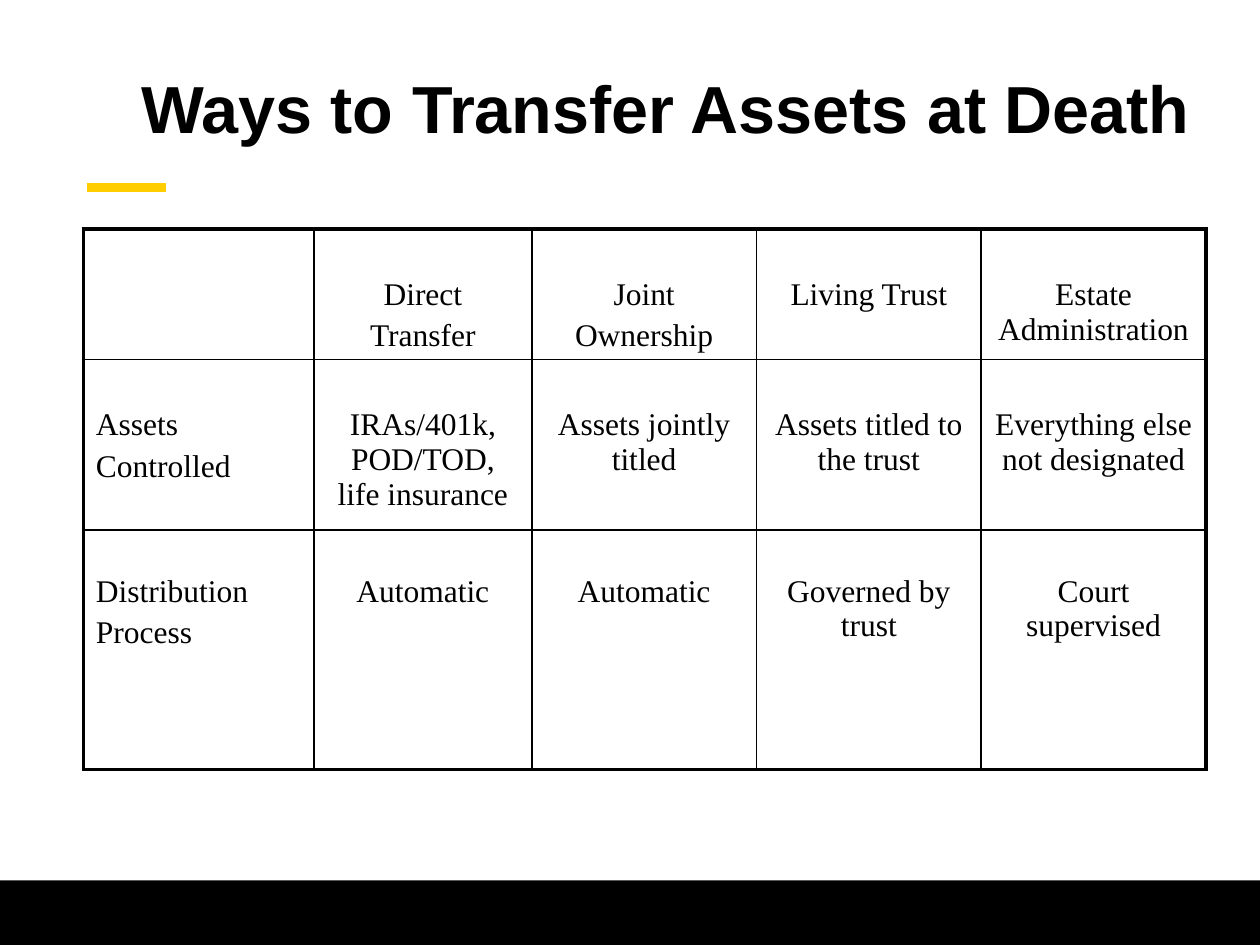
from dataclasses import dataclass

from lxml.etree import SubElement
from pptx import Presentation
from pptx.dml.color import RGBColor
from pptx.enum.shapes import MSO_CONNECTOR, MSO_SHAPE
from pptx.enum.text import MSO_ANCHOR, PP_ALIGN
from pptx.oxml.ns import qn
from pptx.util import Cm, Pt

BLACK = RGBColor(0x00, 0x00, 0x00)
GOLD = RGBColor(0xFF, 0xCD, 0x00)
THIN, THICK = 1, 2.25
PAD, DROP = 0.13, 0.97  # top cell margins in cm: plain, and one line lower


@dataclass
class Rule:
    left: float
    right: float
    top: float
    color: RGBColor
    width: float


@dataclass
class Row:
    high: float
    texts: tuple[str, ...]
    pad: float = PAD
    above: float = 0
    below: float = 0


RULES = [
    Rule(1.75, 3.35, 3.78, GOLD, 5),
    Rule(1.68, 24.31, 10.69, BLACK, THIN),
]
COLS = [4.65, 4.39, 4.53, 4.53, 4.53]
BLANK = ("",) * len(COLS)
ROWS = [
    Row(2.62, ("", "Direct\nTransfer", "Joint\nOwnership", "Living Trust",
               "Estate Administration"), DROP, THICK, THIN),
    Row(4.19, ("Assets\nControlled", "IRAs/401k, POD/TOD, life insurance",
               "Assets jointly titled", "Assets titled to the trust",
               "Everything else not designated"), DROP, THIN),
    Row(1.73, ("Distribution\nProcess", "Automatic", "Automatic",
               "Governed by trust", "Court supervised")),
    Row(1.14, BLANK),
    Row(1.14, BLANK, below=THICK),
]


def draw_rule(slide, rule: Rule) -> None:
    line = slide.shapes.add_connector(
        MSO_CONNECTOR.STRAIGHT, Cm(rule.left), Cm(rule.top),
        Cm(rule.right), Cm(rule.top))
    line.line.color.rgb = rule.color
    line.line.width = Pt(rule.width)
    SubElement(line._element.spPr, qn("a:effectLst"))


def draw_edge(cell, side: str, width: float) -> None:
    edge = SubElement(cell._tc.get_or_add_tcPr(), qn(f"a:ln{side}"),
                      w=str(Pt(width)))
    if width:
        fill = SubElement(edge, qn("a:solidFill"))
        SubElement(fill, qn("a:srgbClr"), val=str(BLACK))
    else:
        SubElement(edge, qn("a:noFill"))


def fill_cell(cell, row: Row, col: int) -> None:
    last = len(COLS) - 1
    draw_edge(cell, "L", THICK if col == 0 else THIN)
    draw_edge(cell, "R", THICK if col == last else THIN)
    draw_edge(cell, "T", row.above)
    draw_edge(cell, "B", row.below)
    cell.fill.background()
    cell.margin_top = Cm(row.pad)
    cell.vertical_anchor = MSO_ANCHOR.TOP
    frame = cell.text_frame
    for i, text in enumerate(row.texts[col].split("\n")):
        para = frame.add_paragraph() if i else frame.paragraphs[0]
        para.alignment = PP_ALIGN.CENTER if col else PP_ALIGN.LEFT
        para.font.size = Pt(18)
        if i:
            para.space_before = Pt(3.6)
        if text:
            run = para.add_run()
            run.text = text
            run.font.size = Pt(18)
            run.font.name = "Times New Roman"
            run.font.color.rgb = BLACK


def draw_table(slide) -> None:
    table = slide.shapes.add_table(
        len(ROWS), len(COLS), Cm(1.68), Cm(4.62),
        Cm(sum(COLS)), Cm(sum(row.high for row in ROWS))).table
    table.first_row = table.horz_banding = False
    for col, width in enumerate(COLS):
        table.columns[col].width = Cm(width)
    for i, row in enumerate(ROWS):
        table.rows[i].height = Cm(row.high)
        for col in range(len(COLS)):
            fill_cell(table.cell(i, col), row, col)


def draw_title(slide, text: str) -> None:
    title = slide.shapes.title
    title.left, title.top = Cm(2.59), Cm(0.28)
    title.width, title.height = Cm(21.97), Cm(3.94)
    frame = title.text_frame
    frame.word_wrap = True
    frame.vertical_anchor = MSO_ANCHOR.MIDDLE
    para = frame.paragraphs[0]
    para.alignment = PP_ALIGN.LEFT
    para.line_spacing = 0.9
    run = para.add_run()
    run.text = text
    run.font.size = Pt(38)
    run.font.name = "Arial"
    run.font.bold = True
    run.font.color.rgb = BLACK


def main() -> None:
    deck = Presentation()
    deck.slide_width, deck.slide_height = Cm(25.4), Cm(19.05)
    slide = deck.slides.add_slide(deck.slide_layouts[5])

    # Footer band
    band = slide.shapes.add_shape(
        MSO_SHAPE.RECTANGLE, 0, Cm(17.75), Cm(25.4), Cm(1.3))
    band.shadow.inherit = False
    band.fill.solid()
    band.fill.fore_color.rgb = BLACK
    band.line.fill.background()

    # Heading, table and rules
    draw_title(slide, "Ways to Transfer Assets at Death")
    draw_table(slide)
    for rule in RULES:
        draw_rule(slide, rule)

    deck.save("out.pptx")


if __name__ == "__main__":
    main()
